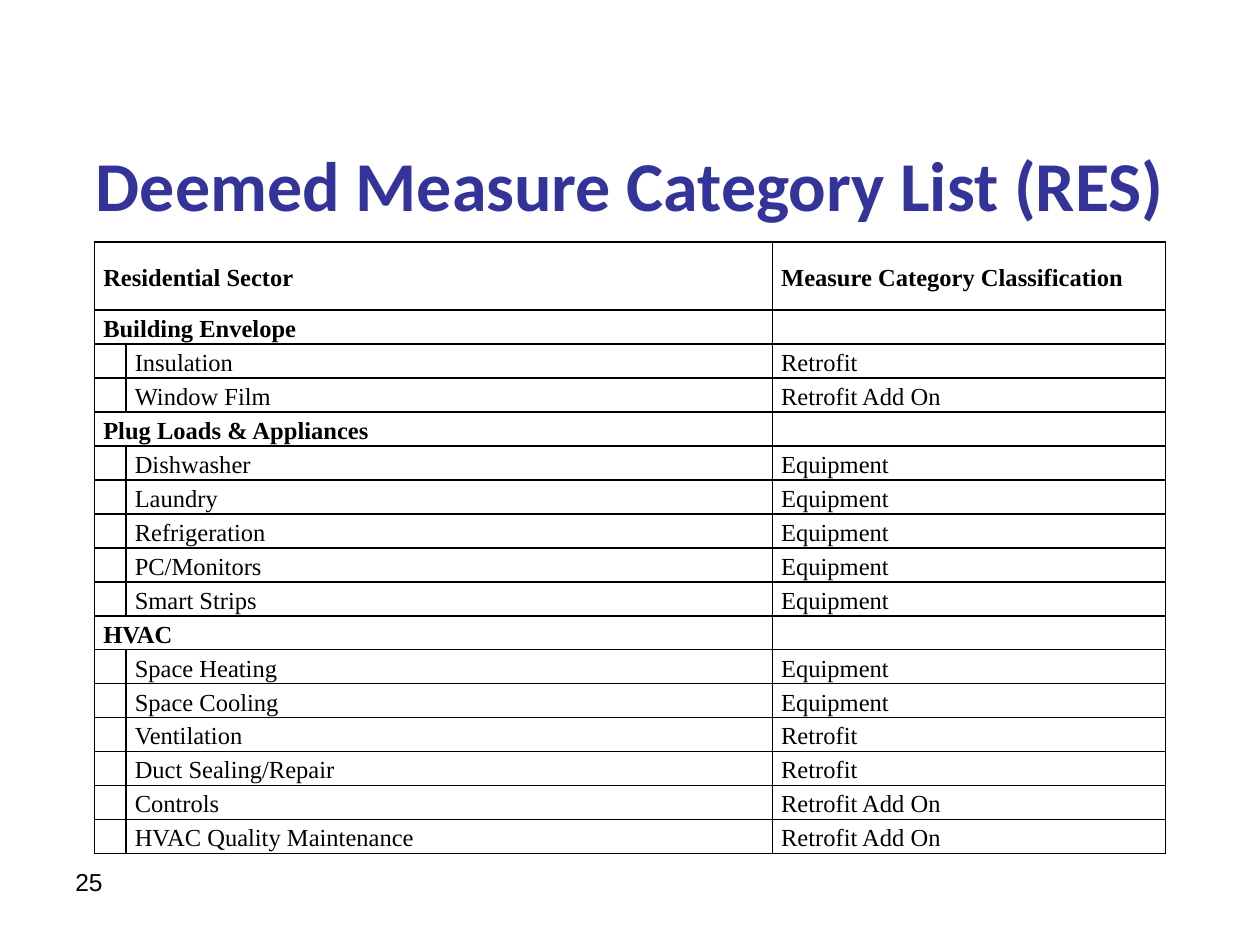
from lxml import etree
from pptx import Presentation
from pptx.dml.color import RGBColor
from pptx.enum.text import MSO_ANCHOR, MSO_AUTO_SIZE, PP_ALIGN
from pptx.oxml.ns import qn
from pptx.util import Inches, Pt

MIDDLE, TOP = MSO_ANCHOR.MIDDLE, MSO_ANCHOR.TOP
CENTER, LEFT = PP_ALIGN.CENTER, PP_ALIGN.LEFT
NO_FIT = MSO_AUTO_SIZE.NONE

TITLE = "Deemed Measure Category List (RES)"
PAGE = "25"
HEADER = ("Residential Sector", "Measure Category Classification")
SECTIONS = {
    "Building Envelope": [
        ("Insulation", "Retrofit"),
        ("Window Film", "Retrofit Add On"),
    ],
    "Plug Loads & Appliances": [
        ("Dishwasher", "Equipment"),
        ("Laundry", "Equipment"),
        ("Refrigeration", "Equipment"),
        ("PC/Monitors", "Equipment"),
        ("Smart Strips", "Equipment"),
    ],
    "HVAC": [
        ("Space Heating", "Equipment"),
        ("Space Cooling", "Equipment"),
        ("Ventilation", "Retrofit"),
        ("Duct Sealing/Repair", "Retrofit"),
        ("Controls", "Retrofit Add On"),
        ("HVAC Quality Maintenance", "Retrofit Add On"),
    ],
}
COLUMNS = (0.25, 5.13, 3.12)
HEADER_HEIGHT, ROW_HEIGHT = 0.54, 0.27
TITLE_FONT = {"name": "Calibri", "size": Pt(40), "bold": True}
PAGE_FONT = {"name": "Arial", "size": Pt(14)}
CELL_FONT = {"name": "Times New Roman", "size": Pt(14)}
CELL_FORMAT = {
    "margin_left": Inches(0.07), "margin_right": Inches(0.07),
    "margin_top": 0, "margin_bottom": 0, "vertical_anchor": MIDDLE,
}


def apply(target, values):
    """Set every attribute in a dict of format values."""
    for name, value in values.items():
        setattr(target, name, value)


def write(p, text, font, color="000000"):
    """Add one formatted run to a paragraph."""
    r = p.add_run()
    r.text = text
    apply(r.font, font)
    r.font.color.rgb = RGBColor.from_string(color)


def add_borders(cell, color="000000", width=Pt(1)):
    """Draw a solid line on all four sides of a cell."""
    tcPr = cell._tc.get_or_add_tcPr()
    for side in ("lnL", "lnR", "lnT", "lnB"):
        ln = etree.SubElement(tcPr, qn(f"a:{side}"), w=str(width))
        fill = etree.SubElement(ln, qn("a:solidFill"))
        etree.SubElement(fill, qn("a:srgbClr"), val=color)


def fill_cell(cell, text, bold):
    """Format one table cell and write its text."""
    add_borders(cell)
    cell.fill.background()
    apply(cell, CELL_FORMAT)
    p = cell.text_frame.paragraphs[0]
    p.line_spacing = 1.15
    if text:
        write(p, text, {**CELL_FONT, "bold": bold})
    else:
        etree.SubElement(p._p, qn("a:endParaRPr"), sz="1400")


def add_title(s):
    """Place and format the title placeholder."""
    title = s.shapes.title
    apply(title, {"left": Inches(0.5), "top": Inches(0.92),
                  "width": Inches(9), "height": Inches(1.08)})
    tf = title.text_frame
    apply(tf, {"word_wrap": True, "auto_size": NO_FIT, "vertical_anchor": MIDDLE})
    p = tf.paragraphs[0]
    p.alignment = CENTER
    write(p, TITLE, TITLE_FONT, "333399")


def add_page_number(s):
    """Add the page number at the lower left."""
    sp = s.shapes.add_textbox(Inches(0.5), Inches(6.83), Inches(1.83), Inches(0.52))
    tf = sp.text_frame
    apply(tf, {"word_wrap": True, "vertical_anchor": TOP})
    p = tf.paragraphs[0]
    p.alignment = LEFT
    write(p, PAGE, PAGE_FONT)


def add_measures(s):
    """Add the table of measures grouped by section."""
    rows = [(HEADER[0], "", HEADER[1])]
    for section, measures in SECTIONS.items():
        rows.append((section, "", ""))
        rows += [("", name, category) for name, category in measures]
    heights = [HEADER_HEIGHT] + [ROW_HEIGHT] * (len(rows) - 1)
    table = s.shapes.add_table(
        len(rows), len(COLUMNS), Inches(0.75), Inches(1.92),
        Inches(sum(COLUMNS)), Inches(sum(heights))).table
    apply(table, {"first_row": False, "horz_banding": False})
    for column, width in zip(table.columns, COLUMNS):
        column.width = Inches(width)
    for i, (row, height) in enumerate(zip(rows, heights)):
        table.rows[i].height = Inches(height)
        is_heading = bool(row[0])
        for j, text in enumerate(row):
            fill_cell(table.cell(i, j), text, is_heading)
        if is_heading:
            table.cell(i, 0).merge(table.cell(i, 1))


def main():
    """Build the slide and save it."""
    prs = Presentation()
    prs.slide_width, prs.slide_height = Inches(10), Inches(7.5)
    s = prs.slides.add_slide(prs.slide_layouts[5])
    add_title(s)
    add_page_number(s)
    add_measures(s)
    prs.save("out.pptx")


if __name__ == "__main__":
    main()
